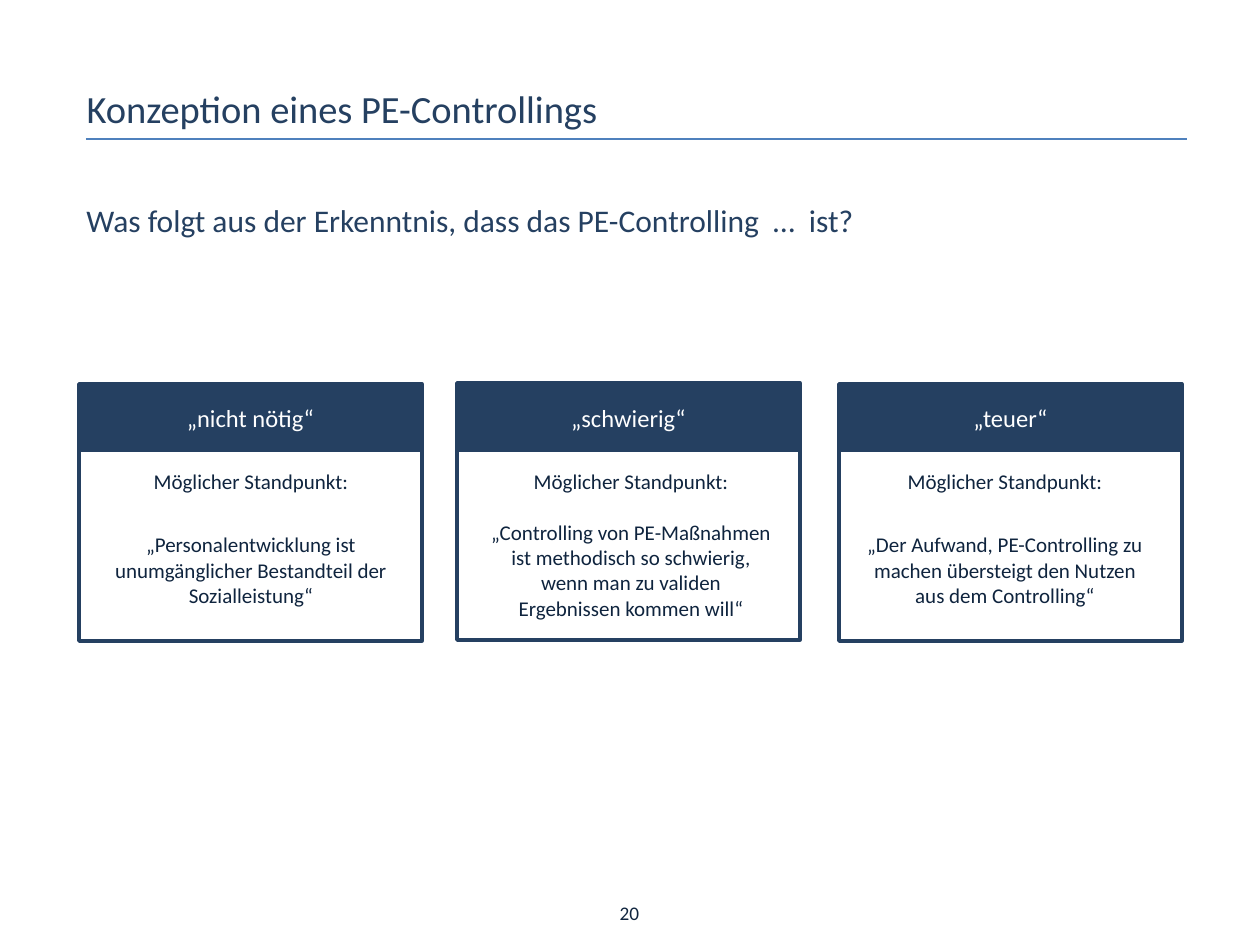
from dataclasses import dataclass

from lxml import etree
from pptx import Presentation
from pptx import util as u
from pptx.dml.color import RGBColor
from pptx.enum import shapes, text
from pptx.oxml.ns import qn

SCALE = 914400 / 126
NAVY = RGBColor(0x25, 0x40, 0x61)
INK = RGBColor(0x0F, 0x24, 0x3E)
DARK = RGBColor(0x10, 0x25, 0x3F)
BLUE = RGBColor(0x4F, 0x81, 0xBD)
WHITE = RGBColor(0xFF, 0xFF, 0xFF)
LEFT, MID = text.PP_ALIGN.LEFT, text.PP_ALIGN.CENTER
TOP, MIDDLE = text.MSO_ANCHOR.TOP, text.MSO_ANCHOR.MIDDLE


@dataclass(frozen=True)
class Style:
    size: int
    color: RGBColor
    align: text.PP_ALIGN = MID
    anchor: text.MSO_ANCHOR = TOP


@dataclass(frozen=True)
class Card:
    left: int
    top: int
    inset: int
    gap: int
    head: str
    quote: str


TITLE = Style(22, NAVY, LEFT)
LEAD = Style(18, NAVY, LEFT)
HEAD = Style(14, WHITE, anchor=MIDDLE)
BODY = Style(12, INK)
PAGE = Style(11, DARK)

CARDS = [
    Card(79, 384, 17, 22, "„nicht nötig“",
         "„Personalentwicklung ist unumgänglicher Bestandteil der "
         "Sozialleistung“"),
    Card(457, 383, 19, 15, "„schwierig“",
         "„Controlling von PE-Maßnahmen ist methodisch so schwierig, "
         "wenn man zu validen Ergebnissen kommen will“"),
    Card(839, 384, 11, 22, "„teuer“",
         "„Der Aufwand, PE-Controlling zu machen übersteigt den Nutzen "
         "aus dem Controlling“"),
]


def px(*vals: int) -> list[u.Emu]:
    return [u.Emu(round(val * SCALE)) for val in vals]


def write(shape, style: Style, *lines: str, gap: int = 0) -> None:
    """Fill a shape with paragraphs that stand gap points apart."""
    frame = shape.text_frame
    frame.text = "\n".join(lines)
    form = {"word_wrap": True, "auto_size": text.MSO_AUTO_SIZE.NONE,
            "vertical_anchor": style.anchor}
    for key, val in form.items():
        setattr(frame, key, val)
    font = {"name": "Calibri", "size": u.Pt(style.size), "bold": False}
    for num, para in enumerate(frame.paragraphs):
        para.alignment = style.align
        para.space_before = u.Pt(gap if num else 0)
        for key, val in font.items():
            setattr(para.font, key, val)
        para.font.color.rgb = style.color


def add_text(slide, box: tuple, style: Style, *lines: str, gap: int = 0) -> None:
    write(slide.shapes.add_textbox(*px(*box)), style, *lines, gap=gap)


def add_rect(slide, box: tuple):
    rect = slide.shapes.add_shape(shapes.MSO_SHAPE.RECTANGLE, *px(*box))
    rect.shadow.inherit = False
    return rect


def add_card(slide, card: Card) -> None:
    add_text(slide, (card.left + card.inset, 462, 310, 178), BODY,
             "Möglicher Standpunkt:", card.quote, gap=card.gap)
    edge = add_rect(slide, (card.left, card.top, 343, 257))
    edge.fill.background()
    edge.line.color.rgb = NAVY
    edge.line.width = u.Pt(2)
    head = add_rect(slide, (card.left + 1, 384, 341, 68))
    head.fill.solid()
    head.fill.fore_color.rgb = NAVY
    head.line.fill.background()
    write(head, HEAD, card.head)


def add_rule(slide) -> None:
    rule = slide.shapes.add_connector(
        shapes.MSO_CONNECTOR.STRAIGHT, *px(86, 139, 1187, 139))
    rule.line.color.rgb = BLUE
    rule.line.width = u.Pt(1.25)
    etree.SubElement(rule._element.spPr, qn("a:effectLst"))


def main() -> None:
    deck = Presentation()
    deck.slide_width, deck.slide_height = px(1260, 945)
    slide = deck.slides.add_slide(deck.slide_layouts[5])
    title = slide.shapes.title
    title.left, title.top, title.width, title.height = px(74, 79, 942, 59)
    write(title, TITLE, "Konzeption eines PE-Controllings")
    add_rule(slide)
    add_text(slide, (74, 195, 1121, 357), LEAD,
             "Was folgt aus der Erkenntnis, dass das PE-Controlling  …  ist?")
    for card in CARDS:
        add_card(slide, card)
    add_text(slide, (595, 895, 69, 37), PAGE, "20")
    deck.save("out.pptx")


if __name__ == "__main__":
    main()
